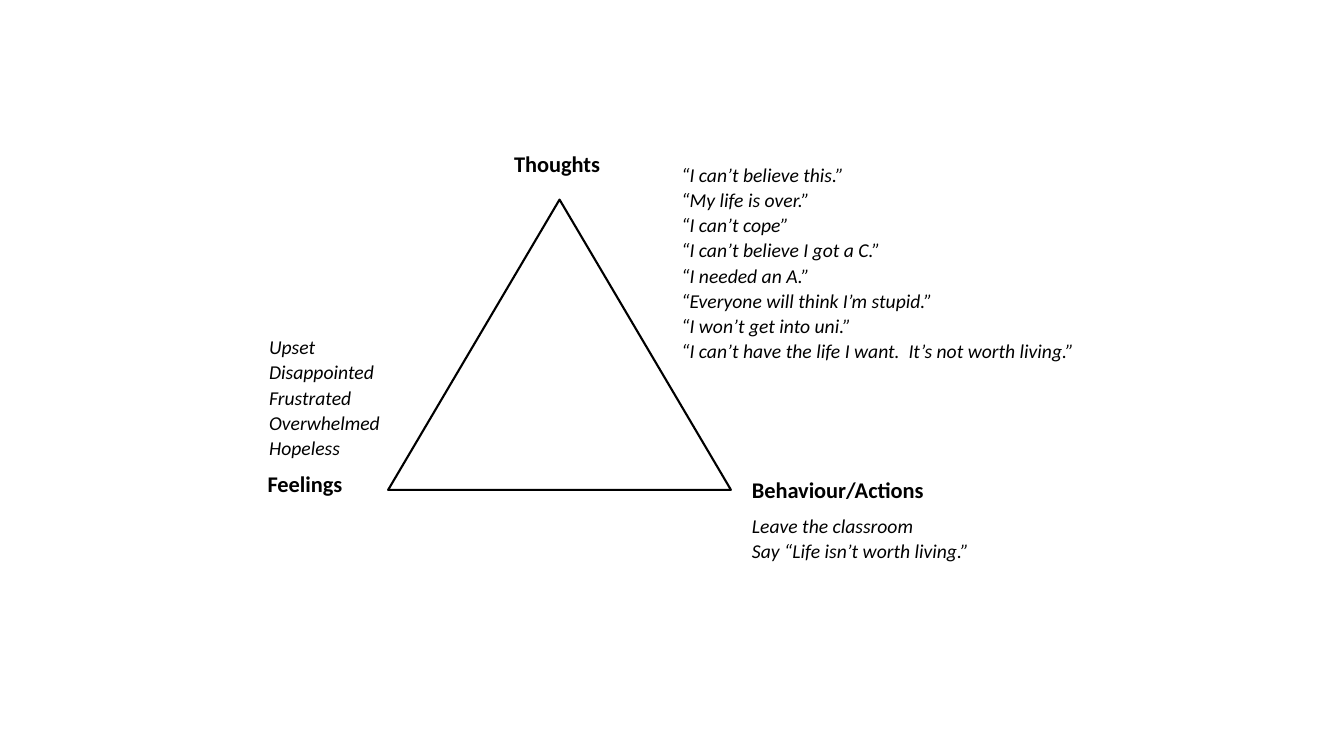
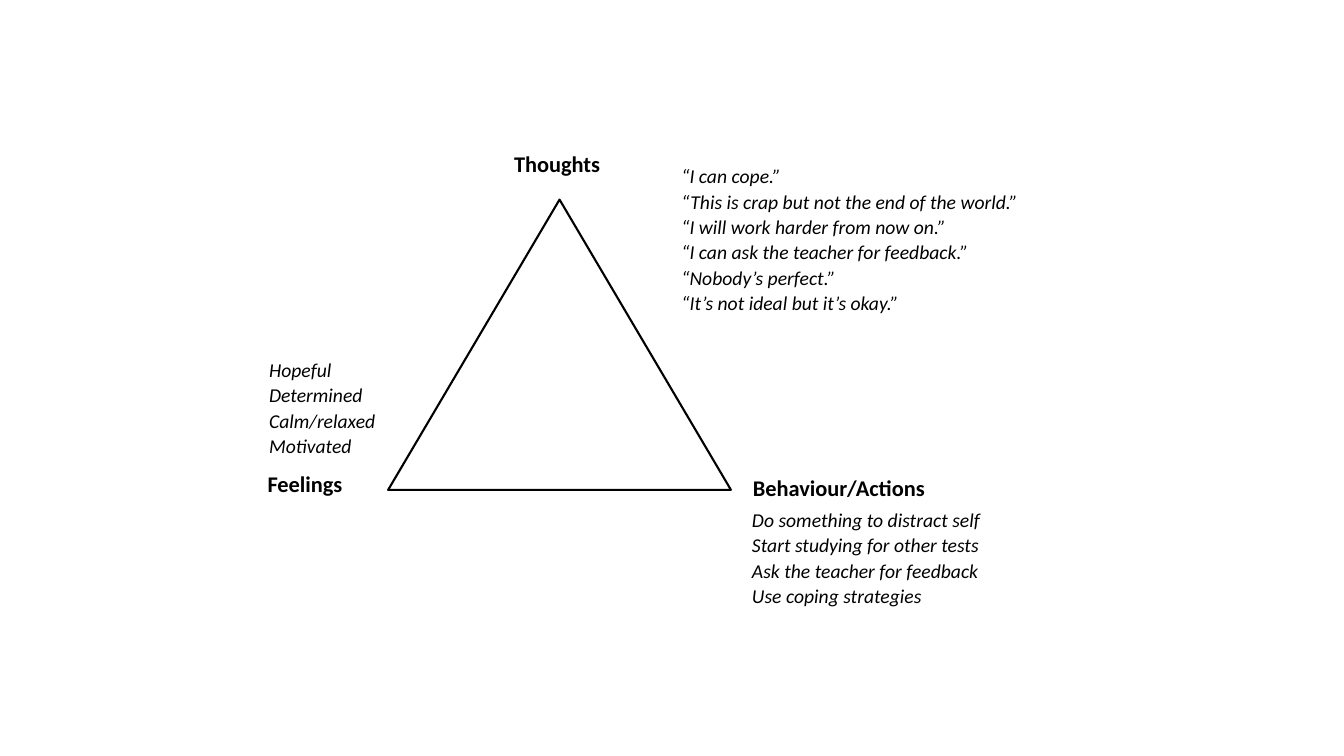
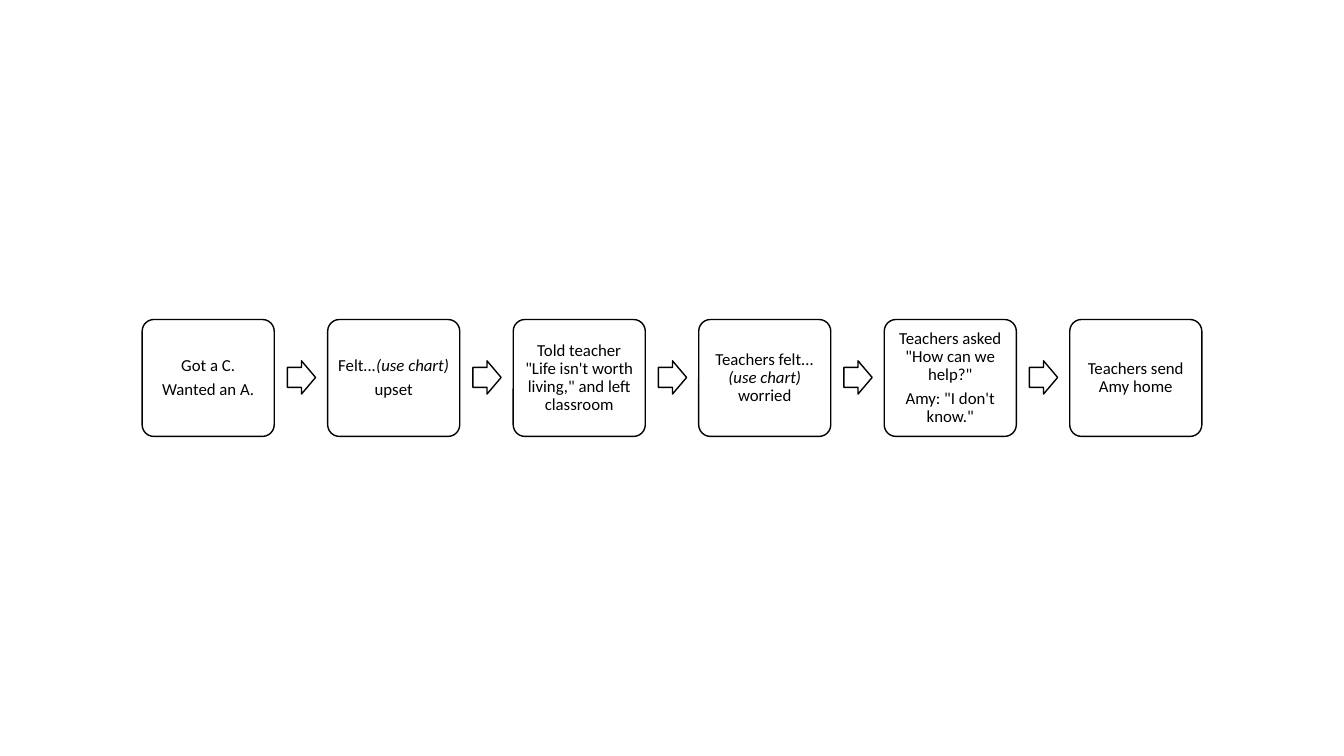
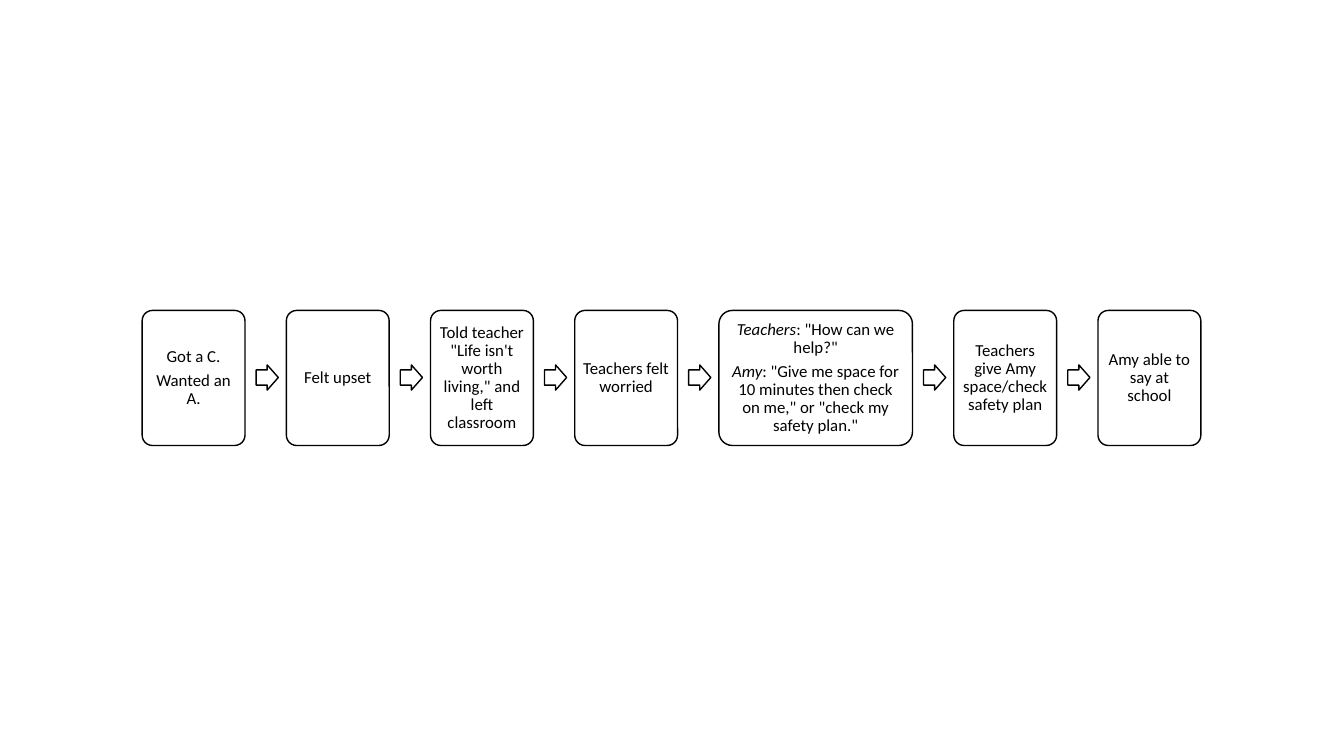
from pptx import Presentation
from pptx.dml.color import RGBColor
from pptx.enum.shapes import MSO_SHAPE as SHAPE
from pptx.enum.text import MSO_ANCHOR as ANCHOR, PP_ALIGN as ALIGN
from pptx.util import Pt

PX = 9144  # EMU per px, 100 px to the inch
BLACK = RGBColor(0x00, 0x00, 0x00)
WHITE = RGBColor(0xFF, 0xFF, 0xFF)
FONT = "Calibri"


def add_white_shape(slide, shape, box, line_pt=0):
    """Add a white preset shape, with a black outline if line_pt is given."""
    sp = slide.shapes.add_shape(shape, *(v * PX for v in box))
    sp.shadow.inherit = False
    sp.fill.solid()
    sp.fill.fore_color.rgb = WHITE
    if line_pt:
        sp.line.color.rgb = BLACK
        sp.line.width = Pt(line_pt)
    else:
        sp.line.fill.background()
    return sp


def write(tf, paragraphs, size, spacing, after=0, align=ALIGN.LEFT, bold=False, italic=False):
    """Fill a text frame; *asterisks* switch italics within a paragraph."""
    tf.word_wrap = True
    for i, text in enumerate(paragraphs):
        p = tf.paragraphs[0] if i == 0 else tf.add_paragraph()
        p.alignment = align
        p.line_spacing = spacing
        p.space_after = Pt(after)
        p.font.name = FONT
        p.font.size = Pt(size)
        p.font.bold = bold
        p.font.color.rgb = BLACK
        if italic:
            p.font.italic = True
            p.text = text
            continue
        for j, part in enumerate(text.split("*")):
            if part:
                r = p.add_run()
                r.text = part
                if j % 2:
                    r.font.italic = True


prs = Presentation()
prs.slide_width = 1333 * PX
prs.slide_height = 750 * PX
blank = prs.slide_layouts[6]

# Thoughts, feelings and behaviour triangles: boxes are left, top, width, height
triangles = [
    {
        "spacing": 1.07,
        "thoughts": ((666, 155, 464, 222), [
            "“I can’t believe this.”",
            "“My life is over.”",
            "“I can’t cope”\v“I can’t believe I got a C.”",
            "“I needed an A.”",
            "“Everyone will think I’m stupid.”",
            "“I won’t get into uni.”",
            "“I can’t have the life I want.  It’s not worth living.”",
        ]),
        "feelings": ((257, 326, 138, 137), [
            "Upset", "Disappointed", "Frustrated", "Overwhelmed", "Hopeless",
        ]),
        "behaviour_label": (726, 466, 210, 50),
        "behaviour": ((736, 503, 272, 80), [
            "Leave the classroom", "Say “Life isn’t worth living.”",
        ]),
    },
    {
        "spacing": 1.08,
        "thoughts": ((666, 156, 464, 206), [
            "“I can cope.”",
            "“This is crap but not the end of the world.”",
            "“I will work harder from now on.”",
            "“I can ask the teacher for feedback.”",
            "“Nobody’s perfect.”",
            "“It’s not ideal but it’s okay.”",
        ]),
        "feelings": ((257, 348, 138, 111), [
            "Hopeful", "Determined", "Calm/relaxed", "Motivated",
        ]),
        "behaviour_label": (726, 464, 212, 50),
        "behaviour": ((736, 497, 265, 128), [
            "Do something to distract self",
            "Start studying for other tests",
            "Ask the teacher for feedback",
            "Use coping strategies",
        ]),
    },
]
heading = {"size": 16, "spacing": 1.07, "after": 8, "align": ALIGN.CENTER, "bold": True}

for triangle in triangles:
    s = prs.slides.add_slide(blank)
    add_white_shape(s, SHAPE.ISOSCELES_TRIANGLE, (385, 198, 340, 288), 1.5)
    listing = {"size": 14, "spacing": triangle["spacing"], "italic": True}
    boxes = [
        ((489, 142, 127, 46), ["Thoughts"], heading),
        (*triangle["thoughts"], listing),
        (*triangle["feelings"], listing),
        ((232, 460, 141, 56), ["Feelings"], heading),
        (triangle["behaviour_label"], ["Behaviour/Actions"], heading),
        (*triangle["behaviour"], listing),
    ]
    for box, lines, style in boxes:
        sp = add_white_shape(s, SHAPE.RECTANGLE, box)
        sp.text_frame.vertical_anchor = ANCHOR.TOP
        write(sp.text_frame, lines, **style)

# Chains of events: each step is a width and its paragraphs
told_teacher = "Told teacher \"Life isn't worth living,\" and left classroom"
chains = [
    {
        "top": 317, "height": 116, "gap": 53, "arrow": (13, 28, 33),
        "steps": [
            (131, ["Got a C.", "Wanted an A."]),
            (131, ["Felt*...(use chart)*", "upset"]),
            (131, [told_teacher]),
            (131, ["Teachers felt*...(use chart) *worried"]),
            (131, ["Teachers asked \"How can we help?\"", "Amy: \"I don't know.\""]),
            (131, ["Teachers send Amy home"]),
        ],
    },
    {
        "top": 308, "height": 134, "gap": 41, "arrow": (11, 22, 25),
        "steps": [
            (102, ["Got a C.", "Wanted an A."]),
            (102, ["Felt upset"]),
            (102, [told_teacher]),
            (102, ["Teachers felt worried"]),
            (192, [
                "*Teachers*: \"How can we help?\"",
                "*Amy*: \"Give me space for 10 minutes then check on me,\" or \"check my safety plan.\"",
            ]),
            (102, ["Teachers give Amy space/check safety plan"]),
            (102, ["Amy able to say at school"]),
        ],
    },
]

for chain in chains:
    s = prs.slides.add_slide(blank)
    top, height = chain["top"], chain["height"]
    arrow_offset, arrow_w, arrow_h = chain["arrow"]
    left = 141
    for i, (width, paragraphs) in enumerate(chain["steps"]):
        if i:
            arrow_box = (left - chain["gap"] + arrow_offset,
                         top + (height - arrow_h) // 2, arrow_w, arrow_h)
            arrow = add_white_shape(s, SHAPE.RIGHT_ARROW, arrow_box, 1)
            arrow.adjustments[0] = 0.6
            arrow.adjustments[1] = 0.5
        card = add_white_shape(s, SHAPE.ROUNDED_RECTANGLE, (left, top, width, height), 1)
        card.adjustments[0] = 0.1
        tf = card.text_frame
        tf.margin_left = tf.margin_right = tf.margin_top = tf.margin_bottom = 5 * PX
        tf.vertical_anchor = ANCHOR.MIDDLE
        write(tf, paragraphs, size=12, spacing=0.9, after=4.2, align=ALIGN.CENTER)
        left += width + chain["gap"]

prs.save("out.pptx")
